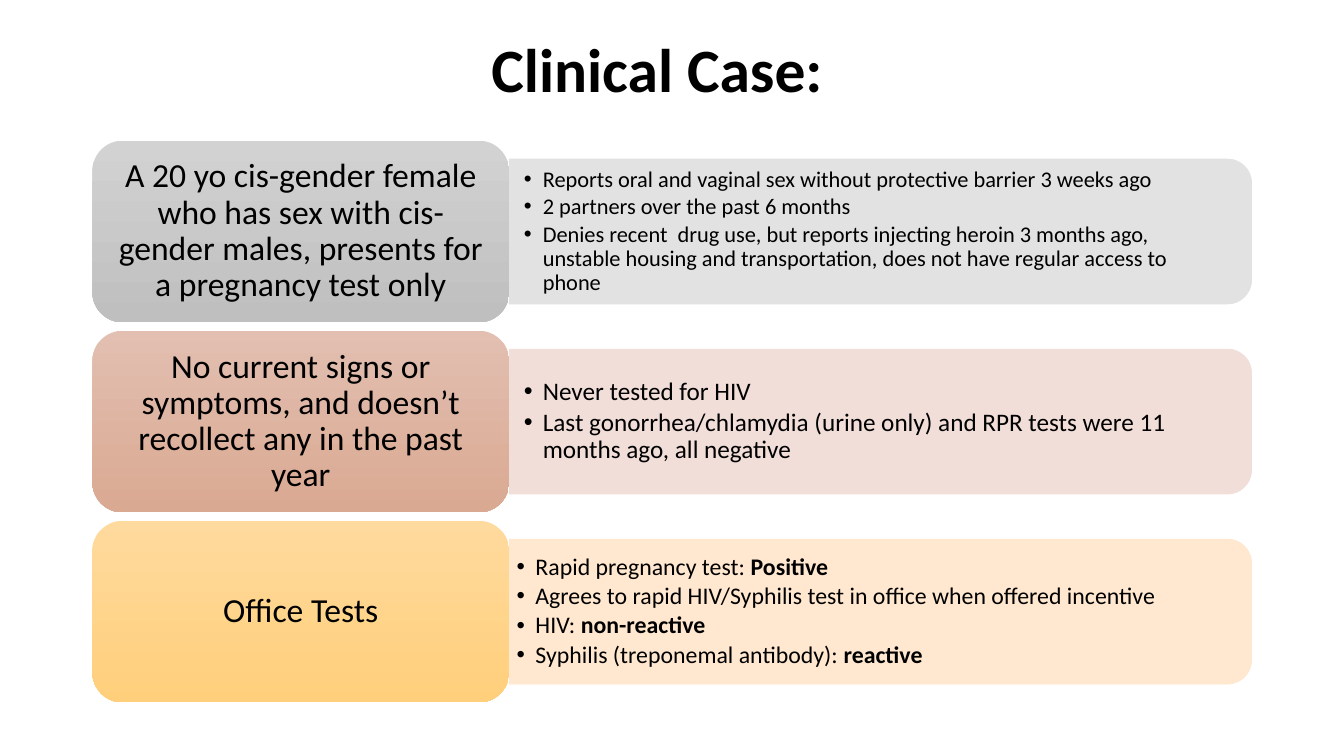
from dataclasses import dataclass

from lxml.etree import SubElement
from pptx import Presentation
from pptx.dml.color import RGBColor as Rgb
from pptx.enum.shapes import MSO_SHAPE as Kind
from pptx.enum.text import MSO_ANCHOR as Anchor, PP_ALIGN as Align
from pptx.oxml.ns import qn
from pptx.util import Emu, Pt

SCALE = 9525
COLORS = {
    "ink": "000000",
    "gray": "E2E2E2", "gray_top": "D2D2D2", "gray_low": "BFBFBF",
    "rose": "F1DED8", "rose_top": "E2BFB1", "rose_low": "DAA992",
    "gold": "FFE8CF", "gold_top": "FFDA9E", "gold_low": "FFCF7B",
}
LEFT, TOP, PITCH = 88, 134, 181
CARD_W, CARD_H = 397, 173
PANEL_W, PANEL_H = 707, 138
NOTE_W, NOTE_H = 700, 125
INDENT = 18


@dataclass(frozen=True)
class Point:
    text: str
    strong: str = ""


@dataclass(frozen=True)
class Row:
    hue: str
    label: str
    size: int
    pad: int
    points: tuple[Point, ...]


ROWS = (
    Row("gray",
        "A 20 yo cis-gender female who has sex with cis-gender males, "
        "presents for a pregnancy test only", 16, 14, (
            Point("Reports oral and vaginal sex without protective barrier 3 weeks ago"),
            Point("2 partners over the past 6 months"),
            Point("Denies recent  drug use, but reports injecting heroin 3 months ago, "
                  "unstable housing and transportation, does not have regular access to phone"),
        )),
    Row("rose",
        "No current signs or symptoms, and doesn’t recollect any in the past year", 18, 14, (
            Point("Never tested for HIV"),
            Point("Last gonorrhea/chlamydia (urine only) and RPR tests were 11 "
                  "months ago, all negative"),
        )),
    Row("gold", "Office Tests", 17, 7, (
        Point("Rapid pregnancy test: ", "Positive"),
        Point("Agrees to rapid HIV/Syphilis test in office when offered incentive"),
        Point("HIV: ", "non-reactive"),
        Point("Syphilis (treponemal antibody): ", "reactive"),
    )),
)


def px(num: float) -> Emu:
    return Emu(round(num * SCALE))


def box(x: float, y: float, w: float, h: float) -> tuple[Emu, ...]:
    return px(x), px(y), px(w), px(h)


def tint(name: str) -> Rgb:
    return Rgb.from_string(COLORS[name])


def assign(item, **values) -> None:
    for name, value in values.items():
        setattr(item, name, value)


def write(para, text: str, size: int, bold: bool = False) -> None:
    run = para.add_run()
    run.text = text
    assign(run.font, name="Calibri", size=Pt(size), bold=bold)
    run.font.color.rgb = tint("ink")


def center(frame, text: str, size: int, bold: bool = False) -> None:
    assign(frame, word_wrap=True, vertical_anchor=Anchor.MIDDLE)
    para = frame.paragraphs[0]
    assign(para, alignment=Align.CENTER, line_spacing=0.9)
    write(para, text, size, bold)


def bullet(para) -> None:
    props = para._p.get_or_add_pPr()
    props.set("marL", str(px(INDENT)))
    props.set("indent", str(px(-INDENT)))
    SubElement(props, qn("a:buFont"), typeface="Arial")
    SubElement(props, qn("a:buChar"), char="•")


def panel(slide, row: Row, mid: float) -> None:
    axis = LEFT + CARD_W + PANEL_W / 2
    shape = slide.shapes.add_shape(
        Kind.ROUND_2_SAME_RECTANGLE,
        *box(axis - PANEL_H / 2, mid - PANEL_W / 2, PANEL_H, PANEL_W))
    shape.rotation = 90
    shape.shadow.inherit = False
    shape.fill.solid()
    shape.fill.fore_color.rgb = tint(row.hue)
    shape.line.color.rgb = tint(row.hue)
    shape.line.width = Pt(0.5)


def notes(slide, row: Row, mid: float) -> None:
    area = slide.shapes.add_textbox(
        *box(LEFT + CARD_W, mid - NOTE_H / 2, NOTE_W, NOTE_H))
    frame = area.text_frame
    side, edge = px(row.pad), px(row.pad // 2)
    assign(frame, word_wrap=True, vertical_anchor=Anchor.MIDDLE,
           margin_left=side, margin_right=side, margin_top=edge, margin_bottom=edge)
    for num, point in enumerate(row.points):
        para = frame.add_paragraph() if num else frame.paragraphs[0]
        assign(para, line_spacing=0.9, space_after=Pt(row.size * 0.15))
        bullet(para)
        write(para, point.text, row.size)
        if point.strong:
            write(para, point.strong, row.size, True)


def card(slide, row: Row, top: int) -> None:
    shape = slide.shapes.add_shape(
        Kind.ROUNDED_RECTANGLE, *box(LEFT, top, CARD_W, CARD_H))
    shape.shadow.inherit = False
    shape.line.fill.background()
    shape.fill.gradient()
    shape.fill.gradient_angle = 270
    for stop, end in zip(shape.fill.gradient_stops, ("top", "low")):
        stop.color.rgb = tint(f"{row.hue}_{end}")
    center(shape.text_frame, row.label, 24)


def main() -> None:
    deck = Presentation()
    assign(deck, slide_width=px(1280), slide_height=px(720))
    slide = deck.slides.add_slide(deck.slide_layouts[6])
    title = slide.shapes.add_textbox(*box(74, 0, 1104, 139))
    center(title.text_frame, "Clinical Case:", 44, True)
    for num, row in enumerate(ROWS):
        top = TOP + num * PITCH
        mid = top + CARD_H / 2
        panel(slide, row, mid)
        notes(slide, row, mid)
        card(slide, row, top)
    deck.save("out.pptx")


if __name__ == "__main__":
    main()
